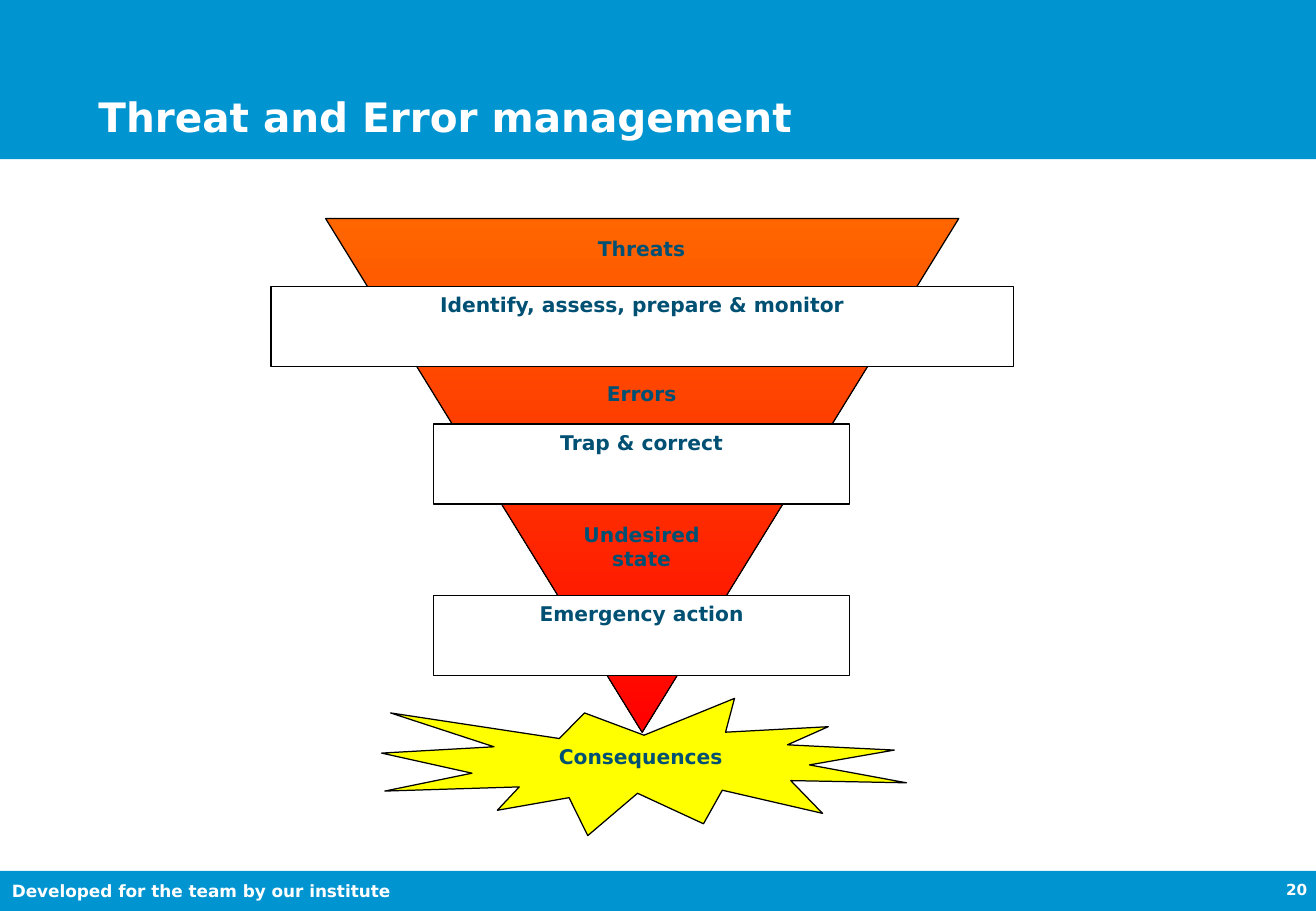
"""Build the threat and error management funnel slide."""
from dataclasses import dataclass

from pptx import Presentation
from pptx.dml.color import RGBColor
from pptx.enum.shapes import MSO_SHAPE as Shape
from pptx.enum.text import MSO_ANCHOR as Anchor, PP_ALIGN as Align
from pptx.util import Pt

EMU_PER_PX = 9144


@dataclass(frozen=True)
class Theme:
    font: str = "DejaVu Sans"
    bar: str = "0094D0"
    ink: str = "005073"
    white: str = "FFFFFF"
    line: str = "000000"
    burst: str = "FFFF00"
    funnel_top: str = "FF6600"
    funnel_tip: str = "FF0000"
    title_size: int = 24
    label_size: int = 12
    footer_size: int = 10
    number_size: int = 9
    line_width: float = 0.75


def px(*lengths):
    return [length * EMU_PER_PX for length in lengths]


def write(box, text, *, font, size, color, align=Align.CENTER,
          anchor=Anchor.TOP, wrap=True, inset=None):
    frame = box.text_frame
    frame.word_wrap = wrap
    frame.vertical_anchor = anchor
    if inset is not None:
        frame.margin_left = frame.margin_right = inset
        frame.margin_top = frame.margin_bottom = inset
    for index, line in enumerate(text.split("\n")):
        para = frame.add_paragraph() if index else frame.paragraphs[0]
        para.alignment = align
        span = para.add_run()
        span.text = line
        span.font.name = font
        span.font.size = Pt(size)
        span.font.bold = True
        span.font.color.rgb = RGBColor.from_string(color)


class Page:
    def __init__(self, deck, theme):
        self.theme = theme
        self.shapes = deck.slides.add_slide(deck.slide_layouts[6]).shapes

    def shape(self, kind, place, fill=None, outlined=True):
        shape = self.shapes.add_shape(kind, *px(*place))
        shape.shadow.inherit = False
        if fill:
            shape.fill.solid()
            shape.fill.fore_color.rgb = RGBColor.from_string(fill)
        if outlined:
            shape.line.color.rgb = RGBColor.from_string(self.theme.line)
            shape.line.width = Pt(self.theme.line_width)
        else:
            shape.line.fill.background()
        return shape

    def bar(self, place):
        return self.shape(Shape.RECTANGLE, place, self.theme.bar, outlined=False)

    def funnel(self, place):
        fill = self.shape(Shape.FLOWCHART_MERGE, place).fill
        fill.gradient()
        fill.gradient_angle = 270
        colors = (self.theme.funnel_top, self.theme.funnel_tip)
        for stop, color in zip(fill.gradient_stops, colors):
            stop.color.rgb = RGBColor.from_string(color)

    def label(self, place, text):
        self.write_label(self.shapes.add_textbox(*px(*place)), text)

    def action(self, place, text):
        self.write_label(self.shape(Shape.RECTANGLE, place, self.theme.white), text)

    def burst(self, place, text):
        self.write_label(self.shape(Shape.EXPLOSION1, place, self.theme.burst), text)

    def write_label(self, box, text):
        write(box, text, font=self.theme.font, size=self.theme.label_size,
              color=self.theme.ink)

    def caption(self, place, text, size, **layout):
        box = self.shapes.add_textbox(*px(*place))
        write(box, text, font=self.theme.font, size=size,
              color=self.theme.white, inset=0, **layout)

    def footer(self, place, text):
        write(self.bar(place), text, font=self.theme.font,
              size=self.theme.footer_size, color=self.theme.white,
              align=Align.LEFT, anchor=Anchor.MIDDLE, wrap=False)


def main():
    theme = Theme()
    deck = Presentation()
    deck.slide_width, deck.slide_height = px(1083, 750)
    page = Page(deck, theme)

    page.bar((0, 0, 1083, 131))
    page.footer((0, 717, 1083, 33), "Developed for the team by our institute")
    page.caption((1051, 725, 32, 25), "20", theme.number_size)
    page.caption((81, 25, 921, 91), "Threat and Error management",
                 theme.title_size, align=Align.LEFT, anchor=Anchor.BOTTOM)

    page.funnel((268, 180, 521, 423))
    left, width = 357, 342
    for top, height, text in ((190, 56, "Threats"), (309, 56, "Errors"),
                              (425, 113, "Undesired\nstate")):
        page.label((left, top, width, height), text)
    page.action((223, 236, 611, 66), "Identify, assess, prepare & monitor")
    for top, text in ((349, "Trap & correct"), (490, "Emergency action")):
        page.action((left, top, width, 66), text)
    page.burst((314, 575, 432, 113), "Consequences")

    deck.save("out.pptx")


if __name__ == "__main__":
    main()
